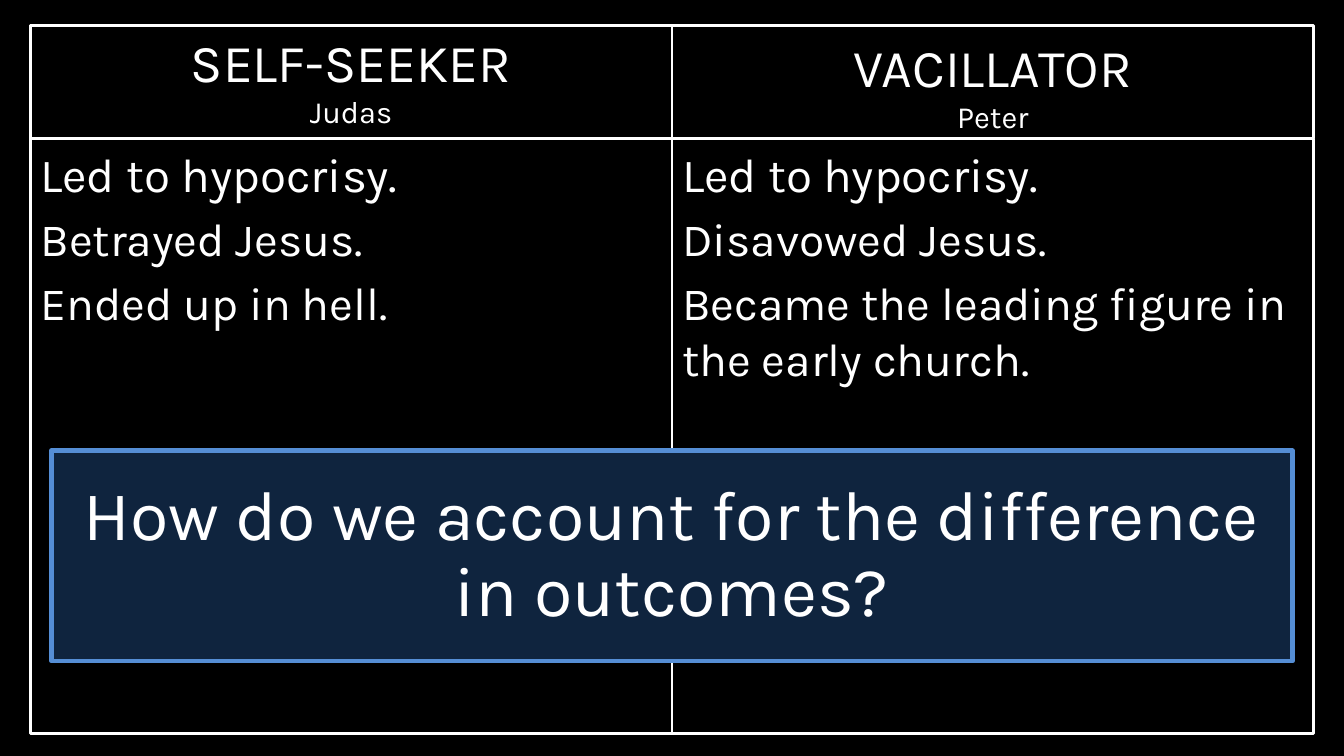
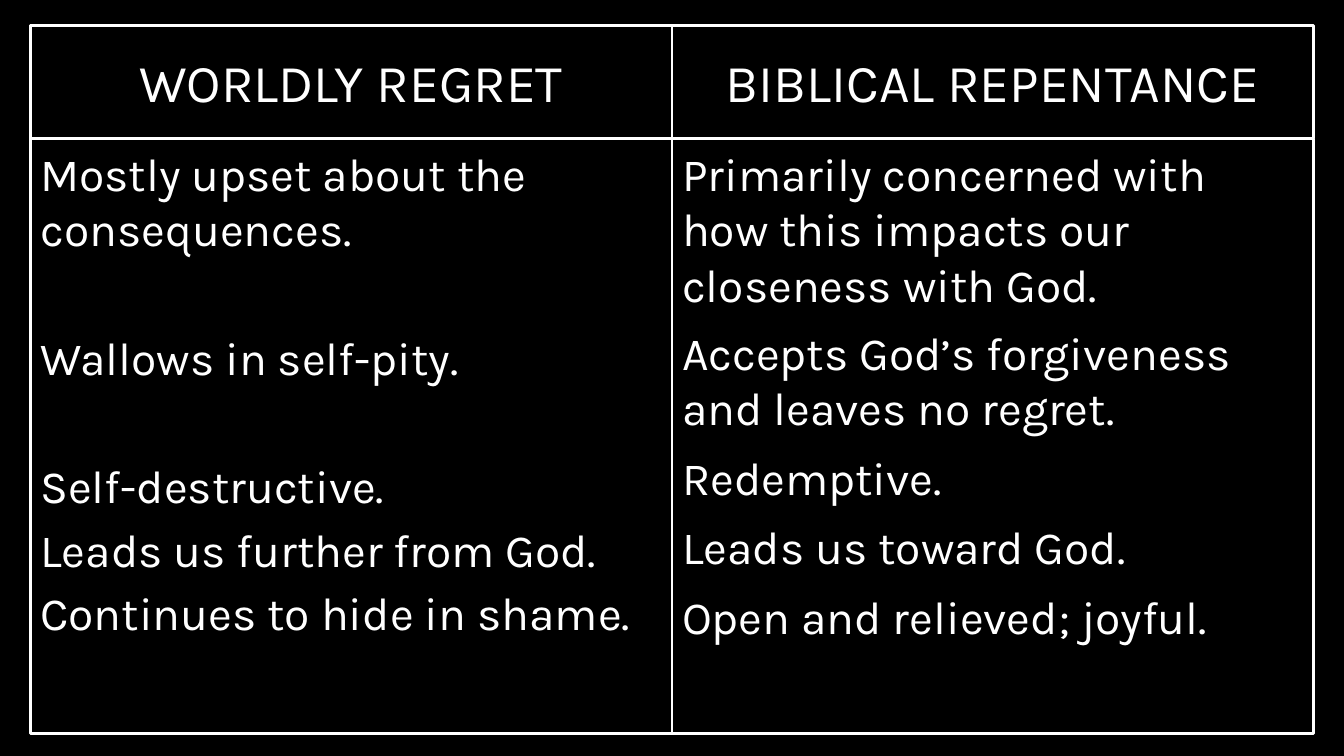
from dataclasses import dataclass

from lxml import etree
from pptx import Presentation
from pptx import util as u
from pptx.dml.color import RGBColor
from pptx.enum import shapes, text
from pptx.oxml import ns


@dataclass(frozen=True)
class Theme:
    font: str = "Karla"
    ground: str = "000000"
    ink: str = "FFFFFF"
    callout_fill: str = "0F243E"
    callout_line: str = "558ED5"
    heading: int = 38
    subheading: int = 22
    lead: int = 34
    body: int = 33
    question: int = 50
    gap: int = 6
    wide_gap: int = 10
    skipped_line: int = 52
    rule: int = 2
    callout_rule: int = 3


THEME = Theme()

# Content: points are (text, size, space after); nudge shifts a heading down
LEAD = ("Led to hypocrisy.", THEME.lead, THEME.gap)
COMPARISONS = [
    {
        "columns": [
            {
                "heading": ["SELF-SEEKER", "Judas"],
                "nudge": -0.02,
                "points": [
                    LEAD,
                    ("Betrayed Jesus.", THEME.body, THEME.gap),
                    ("Ended up in hell.", THEME.body, THEME.gap),
                ],
            },
            {
                "heading": ["VACILLATOR", "Peter"],
                "nudge": 0.03,
                "points": [
                    LEAD,
                    ("Disavowed Jesus.", THEME.body, THEME.gap),
                    ("Became the leading figure in the early church.", THEME.body, THEME.gap),
                ],
            },
        ],
        "question": "How do we account for the difference in outcomes?",
    },
    {
        "columns": [
            {
                "heading": ["WORLDLY REGRET"],
                "nudge": 0,
                "points": [
                    ("Mostly upset about the consequences.", THEME.body, THEME.skipped_line),
                    ("Wallows in self-pity.", THEME.body, THEME.skipped_line),
                    ("Self-destructive.", THEME.body, THEME.gap),
                    ("Leads us further from God.", THEME.body, THEME.gap),
                    ("Continues to hide in shame.", THEME.body, THEME.gap),
                ],
            },
            {
                "heading": ["BIBLICAL REPENTANCE"],
                "nudge": 0,
                "points": [
                    ("Primarily concerned with how this impacts our closeness with God.",
                     THEME.body, 9),
                    ("Accepts God’s forgiveness and leaves no regret.", THEME.body, THEME.wide_gap),
                    ("Redemptive.", THEME.body, THEME.wide_gap),
                    ("Leads us toward God.", THEME.body, THEME.wide_gap),
                    ("Open and relieved; joyful.", THEME.body, THEME.wide_gap),
                ],
            },
        ],
        "question": None,
    },
]

# Grid, in inches
SLIDE_W, SLIDE_H = 13.33, 7.5
LEFT, TOP = 0.3, 0.25
COLUMN_W = (SLIDE_W - 2 * LEFT) / 2
HEADING_H, POINTS_H = 1.12, 5.91
POINTS_TOP = TOP + HEADING_H
CALLOUT_H = 2.09
CALLOUT = (0.51, 4.47, SLIDE_W - 2 * 0.51, CALLOUT_H)

# Comparison layout: heading and list placeholder of each column
COMPARISON_LAYOUT = 4
COLUMN_PLACEHOLDERS = [(1, 2), (3, 4)]


def rgb(value):
    return RGBColor.from_string(value)


def inches(box):
    return [u.Inches(length) for length in box]


def draw_cell(slide, box):
    cell = slide.shapes.add_shape(shapes.MSO_SHAPE.RECTANGLE, *inches(box))
    cell.shadow.inherit = False
    cell.fill.background()
    cell.line.color.rgb = rgb(THEME.ink)
    cell.line.width = u.Pt(THEME.rule)


def write(holder, box, lines, anchor, align, spacing=1.0):
    """Place a placeholder and fill it with (text, size, space after) lines."""
    holder.left, holder.top, holder.width, holder.height = inches(box)
    frame = holder.text_frame
    frame.text = "\n".join(line[0] for line in lines)
    frame.word_wrap = True
    frame.auto_size = text.MSO_AUTO_SIZE.NONE
    frame.vertical_anchor = anchor
    for paragraph, (_, size, after) in zip(frame.paragraphs, lines):
        paragraph.alignment = align
        paragraph.line_spacing = spacing
        paragraph.space_before = u.Pt(0)
        paragraph.space_after = u.Pt(after)
        # Plain paragraphs: no bullet, no hanging indent
        props = paragraph._p.get_or_add_pPr()
        props.set("marL", "0")
        props.set("indent", "0")
        etree.SubElement(props, ns.qn("a:buNone"))
        for run in paragraph.runs:
            run.font.name = THEME.font
            run.font.size = u.Pt(size)
            run.font.bold = False
            run.font.color.rgb = rgb(THEME.ink)


def add_column(slide, index, column):
    left = LEFT + index * COLUMN_W
    heading_id, points_id = COLUMN_PLACEHOLDERS[index]
    draw_cell(slide, (left, TOP, COLUMN_W, HEADING_H))
    draw_cell(slide, (left, POINTS_TOP, COLUMN_W, POINTS_H))

    sizes = (THEME.heading, THEME.subheading)
    heading = [(line, size, 0) for line, size in zip(column["heading"], sizes)]
    write(slide.placeholders[heading_id],
          (left, TOP + column["nudge"], COLUMN_W, HEADING_H),
          heading, text.MSO_ANCHOR.MIDDLE, text.PP_ALIGN.CENTER)
    write(slide.placeholders[points_id],
          (left, POINTS_TOP + 0.02, COLUMN_W, POINTS_H - 0.02),
          column["points"], text.MSO_ANCHOR.TOP, text.PP_ALIGN.LEFT)


def add_question(slide, question):
    callout = slide.shapes.title
    tree = callout.element.getparent()
    if question is None:
        tree.remove(callout.element)
        return
    write(callout, CALLOUT, [(question, THEME.question, THEME.gap)],
          text.MSO_ANCHOR.MIDDLE, text.PP_ALIGN.CENTER, spacing=0.9)
    callout.fill.solid()
    callout.fill.fore_color.rgb = rgb(THEME.callout_fill)
    callout.line.color.rgb = rgb(THEME.callout_line)
    callout.line.width = u.Pt(THEME.callout_rule)
    tree.append(callout.element)  # bring in front of the grid


def main():
    deck = Presentation()
    deck.slide_width, deck.slide_height = inches((SLIDE_W, SLIDE_H))
    ground = deck.slide_master.background.fill
    ground.solid()
    ground.fore_color.rgb = rgb(THEME.ground)

    for comparison in COMPARISONS:
        slide = deck.slides.add_slide(deck.slide_layouts[COMPARISON_LAYOUT])
        for index, column in enumerate(comparison["columns"]):
            add_column(slide, index, column)
        add_question(slide, comparison["question"])
    deck.save("out.pptx")


if __name__ == "__main__":
    main()
